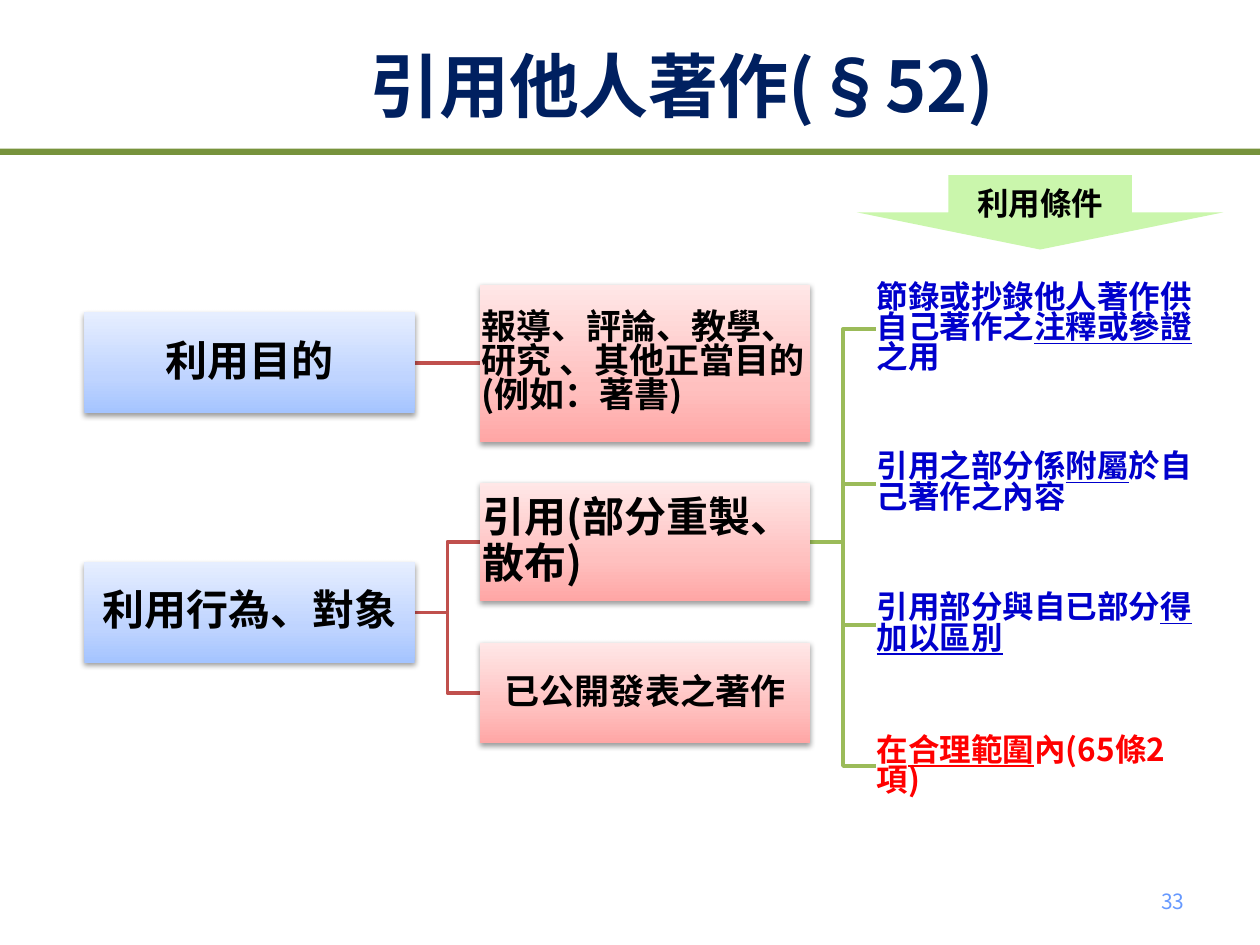
from copy import deepcopy

from lxml import etree
from pptx import Presentation
from pptx.dml.color import RGBColor
from pptx.enum.shapes import MSO_SHAPE
from pptx.enum.text import MSO_ANCHOR, PP_ALIGN
from pptx.oxml.ns import qn
from pptx.util import Inches, Pt

RECT, DOWN_ARROW = MSO_SHAPE.RECTANGLE, MSO_SHAPE.DOWN_ARROW
LEFT, CENTER, RIGHT = PP_ALIGN.LEFT, PP_ALIGN.CENTER, PP_ALIGN.RIGHT
TOP, MIDDLE = MSO_ANCHOR.TOP, MSO_ANCHOR.MIDDLE
FONT = "Noto Sans CJK SC"
COLORS = {
    "rule": "77933C", "title": "002060", "number": "6699FF", "arrow": "CAF6AC",
    "black": "000000", "blue": "0000CC", "red": "FF0000",
    "red_line": "C0504D", "green_line": "9BBB59",
}
GRADIENTS = {
    "blue": ("A4C4FF", "BFD4FF", "E6EEFF"),
    "pink": ("FFA6A5", "FFC0BF", "FFE7E7"),
}
STOPS = (0, 0.35, 1)

COLUMN_WIDTH, COLUMN_GAP = 2.62, 0.52
COLUMNS = [0.67 + i * (COLUMN_WIDTH + COLUMN_GAP) for i in range(3)]
ROW_HEIGHT = 0.8


def rgb(name):
    return RGBColor.from_string(COLORS[name])


def write(shape, text, size, color="black", bold=True, align=CENTER,
          anchor=MIDDLE, inset=None, spacing=None):
    """Fill a shape with one paragraph; parts between underscores are underlined."""
    frame = shape.text_frame
    frame.word_wrap = True
    frame.vertical_anchor = anchor
    if inset is not None:
        frame.margin_left = frame.margin_right = Inches(inset)
        frame.margin_top = frame.margin_bottom = Inches(inset)
    para = frame.paragraphs[0]
    para.alignment = align
    if spacing:
        para.line_spacing = spacing
    for i, part in enumerate(text.split("_")):
        if not part:
            continue
        span = para.add_run()
        span.text = part
        font = span.font
        font.size, font.bold, font.name = Pt(size), bold, FONT
        font.color.rgb = rgb(color)
        if i % 2:
            font.underline = True
        etree.SubElement(span._r.get_or_add_rPr(), qn("a:ea"), typeface=FONT)


def add_text(page, box, text, size, **style):
    shape = page.shapes.add_textbox(*map(Inches, box))
    write(shape, text, size, **style)


def add_solid(page, kind, box, color):
    shape = page.shapes.add_shape(kind, *map(Inches, box))
    shape.shadow.inherit = False
    shape.fill.solid()
    shape.fill.fore_color.rgb = rgb(color)
    shape.line.fill.background()
    return shape


def add_soft_shadow(shape):
    shape.shadow.inherit = False
    effects = shape._element.spPr.find(qn("a:effectLst"))
    shadow = etree.SubElement(effects, qn("a:outerShdw"), blurRad="40000", dist="20000",
                              dir="5400000", rotWithShape="0")
    tint = etree.SubElement(shadow, qn("a:srgbClr"), val=COLORS["black"])
    etree.SubElement(tint, qn("a:alpha"), val="38000")


def add_card(page, box, gradient, text, size, **style):
    card = page.shapes.add_shape(RECT, *map(Inches, box))
    card.line.fill.background()
    card.fill.gradient()
    card.fill.gradient_angle = 90
    stop_list = card._element.spPr.find(".//" + qn("a:gsLst"))
    stop_list.append(deepcopy(stop_list[-1]))
    for stop, position, color in zip(card.fill.gradient_stops, STOPS, GRADIENTS[gradient]):
        stop.position = position
        stop.color.rgb = RGBColor.from_string(color)
    add_soft_shadow(card)
    write(card, text, size, **style)


def add_branch(page, column, start_y, end_y, color):
    """Join a column to the next one with a line that bends halfway."""
    start_x = COLUMNS[column] + COLUMN_WIDTH
    middle_x, end_x = start_x + COLUMN_GAP / 2, COLUMNS[column + 1]
    points = [(middle_x, start_y), (middle_x, end_y), (end_x, end_y)]
    if start_y == end_y:
        points = points[-1:]
    builder = page.shapes.build_freeform(Inches(start_x), Inches(start_y))
    builder.add_line_segments([(Inches(x), Inches(y)) for x, y in points], close=False)
    branch = builder.convert_to_shape()
    branch.shadow.inherit = False
    branch.fill.background()
    branch.line.color.rgb = rgb(color)
    branch.line.width = Pt(2)


def add_header(page, rule_box, title_box):
    add_solid(page, RECT, rule_box, "rule")
    add_text(page, title_box, "引用他人著作(§52)", 40, color="title", anchor=TOP)


def add_branches(page):
    purpose_y, act_y, quote_y = 2.88, 4.86, 4.3
    add_branch(page, 0, purpose_y, purpose_y, "red_line")
    for y in (quote_y, 5.5):
        add_branch(page, 0, act_y, y, "red_line")
    for y in (2.61, 3.84, 4.96, 6.08):
        add_branch(page, 1, quote_y, y, "green_line")


def add_topics(page, left):
    for top, text in ((2.48, "利用目的"), (4.46, "利用行為、對象")):
        add_card(page, (left, top, COLUMN_WIDTH, ROW_HEIGHT), "blue", text, 24,
                 inset=0.02, spacing=0.9)


def add_details(page, left):
    details = [
        (2.26, 1.25, "報導、評論、教學、研究 、其他正當目的(例如：著書)", 20, LEFT, 0.01, 0.8),
        (3.83, 0.94, "引用(部分重製、散布)", 24, LEFT, 0.02, 0.9),
        (5.1, ROW_HEIGHT, "已公開發表之著作", 20, CENTER, 0.01, 0.9),
    ]
    for top, height, text, size, align, inset, spacing in details:
        add_card(page, (left, top, COLUMN_WIDTH, height), "pink", text, size,
                 align=align, inset=inset, spacing=spacing)


def add_conditions(page, left):
    conditions = [
        (2.12, 0.99, "節錄或抄錄他人著作供自己著作之_注釋或參證_之用", "blue"),
        (3.44, ROW_HEIGHT, "引用之部分係_附屬_於自己著作之內容", "blue"),
        (4.56, ROW_HEIGHT, "引用部分與自已部分_得加以區別_", "blue"),
        (5.69, ROW_HEIGHT, "在_合理範圍_內(65條2項)", "red"),
    ]
    for top, height, text, color in conditions:
        add_text(page, (left, top, COLUMN_WIDTH, height), text, 18, color=color,
                 align=LEFT, inset=0.01, spacing=0.8)


def add_condition_arrow(page, box):
    arrow = add_solid(page, DOWN_ARROW, box, "arrow")
    write(arrow, "利用條件", 18)


def main():
    deck = Presentation()
    deck.slide_width, deck.slide_height = Inches(10), Inches(7.5)
    page = deck.slides.add_slide(deck.slide_layouts[6])
    add_header(page, (0, 1.18, 10, 0.05), (0.91, 0.29, 9, 0.96))
    add_text(page, (7.17, 6.95, 2.33, 0.4), "33", 12, color="number", bold=False, align=RIGHT)
    add_branches(page)
    add_topics(page, COLUMNS[0])
    add_details(page, COLUMNS[1])
    add_conditions(page, COLUMNS[2])
    add_condition_arrow(page, (6.8, 1.39, 2.91, 0.59))
    deck.save("out.pptx")


if __name__ == "__main__":
    main()
